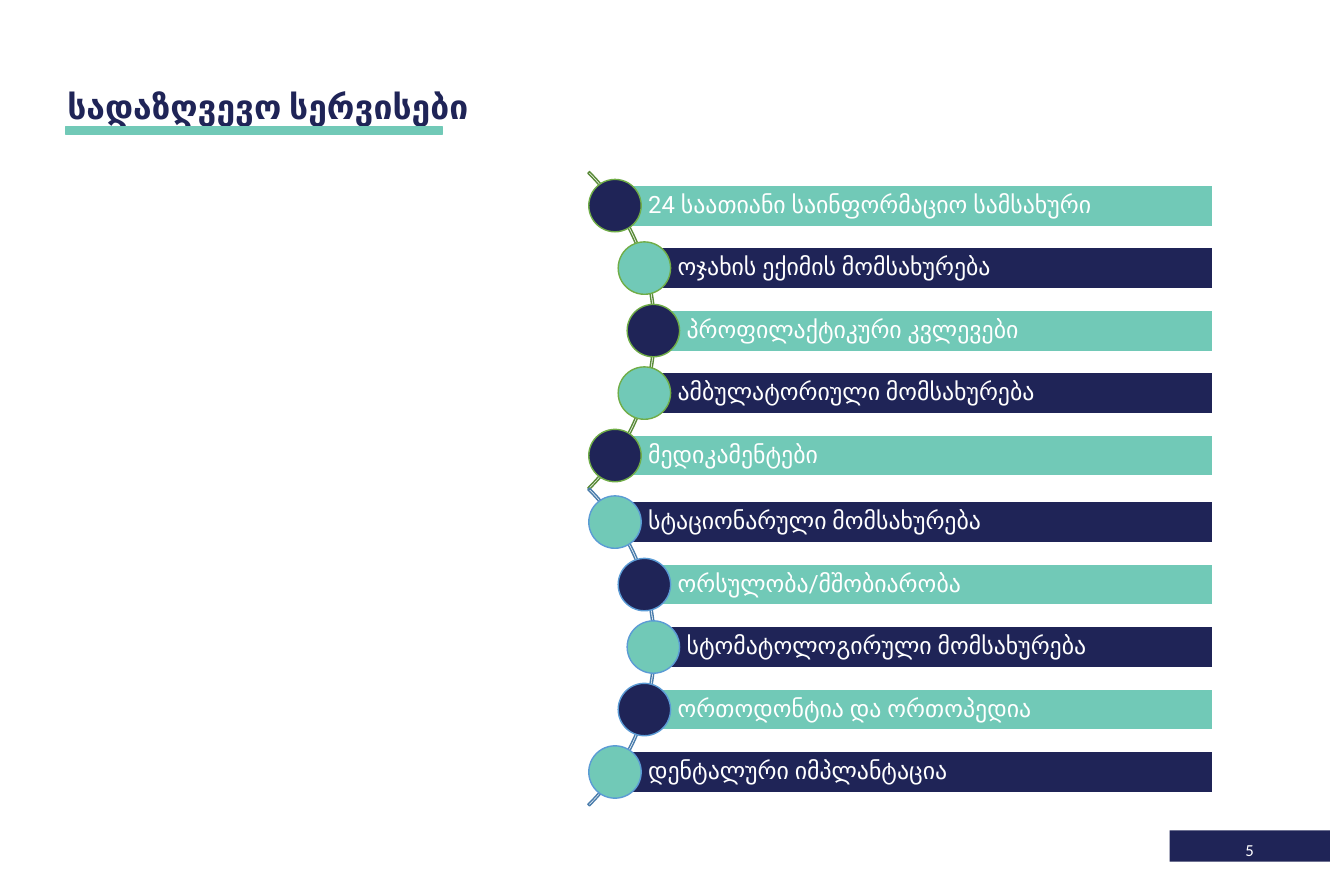
from math import sqrt

from pptx import Presentation
from pptx.dml.color import RGBColor
from pptx.enum.shapes import MSO_SHAPE
from pptx.enum.text import MSO_ANCHOR, PP_ALIGN
from pptx.util import Inches, Pt

COLORS = {
    "navy": "1F2457",
    "teal": "71C9B7",
    "white": "FFFFFF",
    "green": "70AD47",
    "dark_green": "5A8B39",
    "blue": "5B9BD5",
    "dark_blue": "497CAB",
}

SERVICE_GROUPS = [
    (1.05, "green", "dark_green", ("teal", "navy"), [
        "24 საათიანი საინფორმაციო სამსახური",
        "ოჯახის ექიმის მომსახურება",
        "პროფილაქტიკური კვლევები",
        "ამბულატორიული მომსახურება",
        "მედიკამენტები",
    ]),
    (4.19, "blue", "dark_blue", ("navy", "teal"), [
        "სტაციონარული მომსახურება",
        "ორსულობა/მშობიარობა",
        "სტომატოლოგირული მომსახურება",
        "ორთოდონტია და ორთოპედია",
        "დენტალური იმპლანტაცია",
    ]),
]

ARC_LEFT = 2.04
ARC_SIZE = 4.46
MARKER_ORBIT = 2.21
ROW_PITCH = 0.62
BAR_RIGHT = 12.03
BAR_HEIGHT = 0.41
MARKER_SIZE = 0.52


def color(name):
    return RGBColor.from_string(COLORS[name])


def add_figure(shapes, kind, box, fill=None, line=None):
    shape = shapes.add_shape(kind, *[Inches(length) for length in box])
    shape.shadow.inherit = False
    if fill:
        shape.fill.solid()
        shape.fill.fore_color.rgb = color(fill)
    else:
        shape.fill.background()
    if line:
        shape.line.color.rgb = color(line)
        shape.line.width = Pt(1)
    else:
        shape.line.fill.background()
    return shape


def write_text(shape, text, size, font="Calibri", ink="white", bold=False,
               align=PP_ALIGN.LEFT, anchor=MSO_ANCHOR.MIDDLE,
               insets=(0.1, 0.05, 0.1, 0.05), line_spacing=1.0):
    frame = shape.text_frame
    frame.word_wrap = True
    frame.vertical_anchor = anchor
    (frame.margin_left, frame.margin_top,
     frame.margin_right, frame.margin_bottom) = [Inches(inset) for inset in insets]
    paragraph = frame.paragraphs[0]
    paragraph.alignment = align
    paragraph.line_spacing = line_spacing
    run = paragraph.add_run()
    run.text = text
    run.font.name = font
    run.font.size = Pt(size)
    run.font.bold = bold
    run.font.color.rgb = color(ink)


def add_title(slide, left, top, width, height):
    title = slide.shapes.add_textbox(
        Inches(left), Inches(top), Inches(width), Inches(height))
    write_text(title, "სადაზღვევო სერვისები", 24, ink="navy", bold=True,
               anchor=MSO_ANCHOR.BOTTOM)
    underline = (left + 0.08, top + height - 0.04, 3.74, 0.07)
    add_figure(slide.shapes, MSO_SHAPE.RECTANGLE, underline, "teal", "teal")


def add_page_number(slide, left, top, width, height):
    badge = add_figure(slide.shapes, MSO_SHAPE.RECTANGLE,
                       (left, top, width, height), "navy")
    write_text(badge, "5", 12, align=PP_ALIGN.CENTER, insets=(0.1, 0.08, 0.1, 0))


def add_service_group(slide, left, top, size, outline, arc_line, fills, services):
    shapes = slide.shapes.add_group_shape().shapes
    arc = add_figure(shapes, MSO_SHAPE.BLOCK_ARC, (left, top, size, size),
                     line=arc_line)
    for index, value in enumerate((189, 27, 0.005)):
        arc.adjustments[index] = value

    center_x, center_y = left + size / 2, top + size / 2
    for row, service in enumerate(services):
        offset = (row - (len(services) - 1) / 2) * ROW_PITCH
        x = center_x + sqrt(MARKER_ORBIT ** 2 - offset ** 2)
        y = center_y + offset
        bar_fill, marker_fill = fills[row % 2], fills[(row + 1) % 2]
        bar = add_figure(shapes, MSO_SHAPE.RECTANGLE,
                         (x, y - BAR_HEIGHT / 2, BAR_RIGHT - x, BAR_HEIGHT),
                         bar_fill, "white")
        write_text(bar, service, 17, font="Roboto",
                   insets=(0.33, 0.05, 0.05, 0.05), line_spacing=0.9)
        add_figure(shapes, MSO_SHAPE.OVAL,
                   (x - MARKER_SIZE / 2, y - MARKER_SIZE / 2,
                    MARKER_SIZE, MARKER_SIZE),
                   marker_fill, outline)


def main():
    presentation = Presentation()
    presentation.slide_width = Inches(13.33)
    presentation.slide_height = Inches(8.89)
    slide = presentation.slides.add_slide(presentation.slide_layouts[6])
    add_page_number(slide, 11.6, 8.24, 1.59, 0.31)
    add_title(slide, 0.57, 0.8, 7.22, 0.5)
    for top, outline, arc_line, fills, services in SERVICE_GROUPS:
        add_service_group(slide, ARC_LEFT, top, ARC_SIZE,
                          outline, arc_line, fills, services)
    presentation.save("out.pptx")


if __name__ == "__main__":
    main()
